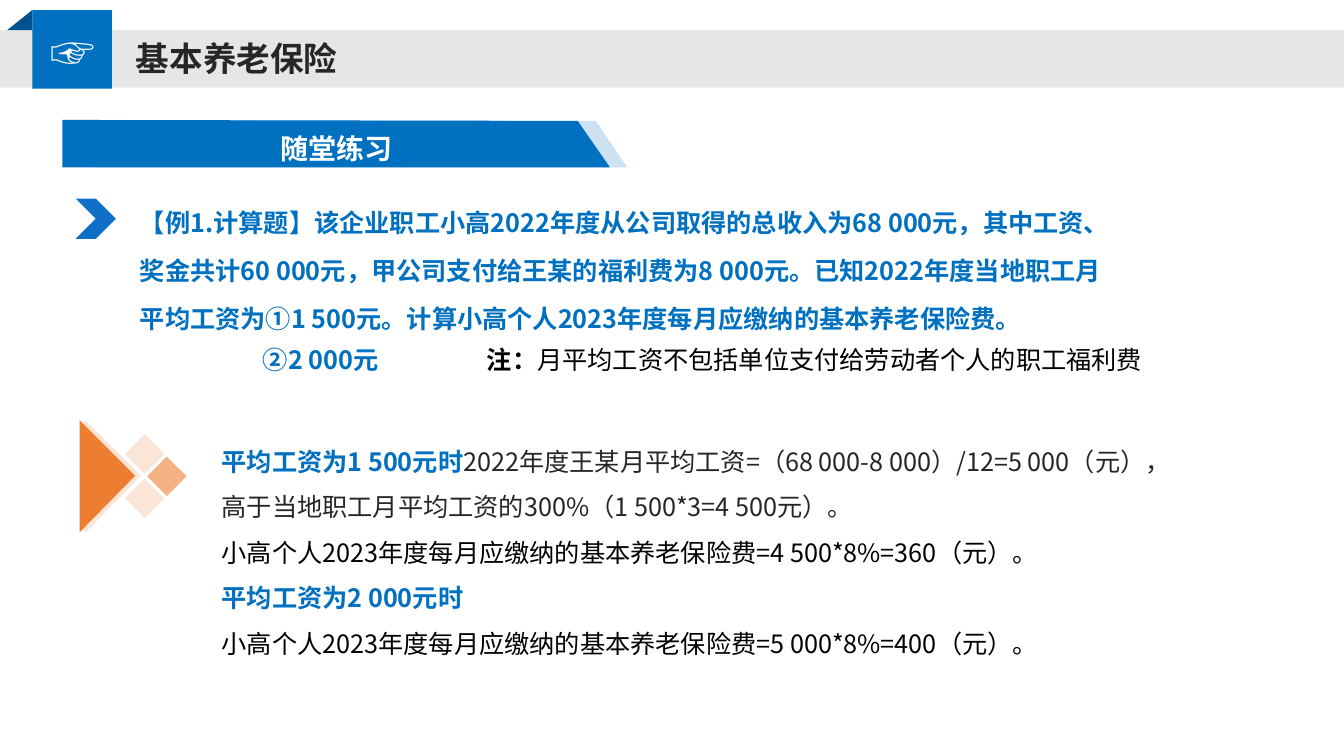
from dataclasses import dataclass

from lxml.etree import SubElement
from pptx import Presentation
from pptx.dml.color import RGBColor
from pptx.enum.shapes import MSO_SHAPE as Preset
from pptx.enum.text import MSO_ANCHOR as Anchor, MSO_AUTO_SIZE as AutoSize
from pptx.oxml.ns import qn
from pptx.util import Pt

PX = 9144  # 100 px to the inch


@dataclass(frozen=True)
class Theme:
    font: str = "Noto Sans CJK SC"
    symbol_font: str = "Noto Sans CJK JP"
    blue: str = "0070C0"
    dark_blue: str = "00518E"
    chevron: str = "0F6FC6"
    band: str = "D9D9D9"
    orange: str = "ED7D31"
    mid_orange: str = "F4B183"
    pale_orange: str = "FBE5D6"
    ink: str = "262626"
    black: str = "000000"
    white: str = "FFFFFF"
    body_size: int = 18
    ribbon_size: int = 20
    title_size: int = 24
    icon_size: int = 32


THEME = Theme()


def paint(shape, color, opacity=100):
    shape.shadow.inherit = False
    shape.fill.solid()
    shape.fill.fore_color.rgb = RGBColor.from_string(color)
    shape.line.fill.background()
    if opacity < 100:
        color_element = shape.fill._xPr.find(qn("a:solidFill"))[0]
        SubElement(color_element, qn("a:alpha"), val=str(opacity * 1000))
    return shape


def add_preset(slide, preset, box, color, opacity=100):
    shape = slide.shapes.add_shape(preset, *(length * PX for length in box))
    return paint(shape, color, opacity)


def add_outline(slide, left, top, points, color, opacity=100):
    """Draw a closed outline from points relative to left and top."""
    start, *others = [(left + x, top + y) for x, y in points]
    builder = slide.shapes.build_freeform(*start, scale=PX)
    builder.add_line_segments(others, close=True)
    return paint(builder.convert_to_shape(), color, opacity)


def add_run(paragraph, text, color, bold=False, size=THEME.body_size, font=THEME.font):
    run = paragraph.add_run()
    run.text = text
    run.font.size = Pt(size)
    run.font.bold = bold
    run.font.color.rgb = RGBColor.from_string(color)
    run.font.name = font
    for script in ("a:ea", "a:sym"):
        SubElement(run.font._element, qn(script), typeface=font)


def add_text(slide, box, lines, wrap=True, spacing=None, after=None, **style):
    """Write lines, each a list of (text, color, bold) runs."""
    frame = slide.shapes.add_textbox(*(length * PX for length in box)).text_frame
    frame.word_wrap = wrap
    frame.auto_size = AutoSize.SHAPE_TO_FIT_TEXT
    for index, runs in enumerate(lines):
        paragraph = frame.add_paragraph() if index else frame.paragraphs[0]
        if spacing:
            paragraph.line_spacing = spacing
        if after:
            paragraph.space_after = Pt(after)
        for text, color, bold in runs:
            add_run(paragraph, text, color, bold, **style)


def add_header(slide, left, top, width):
    add_preset(slide, Preset.RECTANGLE, (left, top + 20, width, 57), THEME.band, 65)
    add_preset(slide, Preset.RECTANGLE, (left + 32, top, 79, 78), THEME.blue)
    add_outline(slide, left + 7, top, [(0, 20), (25, 0), (25, 20)], THEME.dark_blue)
    add_text(slide, (left + 125, top + 23, 222, 50),
             [[("基本养老保险", THEME.ink, True)]], wrap=False, size=THEME.title_size)
    add_text(slide, (left + 40, top + 10, 65, 64), [[("☞", THEME.white, False)]],
             wrap=False, size=THEME.icon_size, font=THEME.symbol_font)


def add_ribbon(slide, left, top, text):
    height = 47
    for offset, upper, lower, opacity in ((29, 500, 531, 20), (0, 511, 543, 100)):
        points = [(0, 0), (upper, 1), (lower, height), (0, height)]
        ribbon = add_outline(slide, left + offset, top, points, THEME.blue, opacity)
    frame = ribbon.text_frame
    frame.word_wrap = True
    frame.vertical_anchor = Anchor.MIDDLE
    paragraph = frame.paragraphs[0]
    paragraph.line_spacing = 1.3
    add_run(paragraph, text, THEME.white, True, THEME.ribbon_size)


def add_question(slide, left, top):
    add_preset(slide, Preset.CHEVRON, (left, top + 5, 40, 40), THEME.chevron)
    question = (
        "【例1.计算题】该企业职工小高2022年度从公司取得的总收入为68 000元，其中工资、",
        "奖金共计60 000元，甲公司支付给王某的福利费为8 000元。已知2022年度当地职工月",
        "平均工资为①1 500元。计算小高个人2023年度每月应缴纳的基本养老保险费。",
    )
    add_text(slide, (left + 54, top, 1014, 145),
             [[(line, THEME.blue, True)] for line in question],
             wrap=False, spacing=1.3, after=6)
    add_text(slide, (left + 176, top + 145, 147, 40), [[("②2 000元", THEME.blue, True)]])
    add_text(slide, (left + 398, top + 145, 671, 40), [[
        ("注：", THEME.black, True),
        ("月平均工资不包括单位支付给劳动者个人的职工福利费", THEME.black, False)]])


def add_answer_marker(slide, left, top):
    for x, y, color in ((45, 14, THEME.pale_orange), (45, 58, THEME.pale_orange),
                        (67, 36, THEME.mid_orange)):
        add_preset(slide, Preset.DIAMOND, (left + x, top + y, 39, 39), color)
    edge = [(6, 0), (61, 55), (6, 111), (3, 108), (55, 55), (3, 3)]
    add_outline(slide, left, top, edge, THEME.pale_orange)
    add_outline(slide, left, top, [(0, 0), (55, 55), (0, 111)], THEME.orange)


def add_answer(slide, left, top):
    add_answer_marker(slide, left, top)
    add_text(slide, (left + 131, top + 6, 956, 237), [
        [("平均工资为1 500元时", THEME.blue, True),
         ("2022年度王某月平均工资=（68 000-8 000）/12=5 000（元），"
          "高于当地职工月平均工资的300%（1 500*3=4 500元）。", THEME.ink, False)],
        [("小高个人2023年度每月应缴纳的基本养老保险费=4 500*8%=360（元）。",
          THEME.black, False)],
        [("平均工资为2 000元时", THEME.blue, True)],
        [("小高个人2023年度每月应缴纳的基本养老保险费=5 000*8%=400（元）。",
          THEME.black, False)],
    ], spacing=1.5)


def main():
    width, height = 1333, 750
    presentation = Presentation()
    presentation.slide_width = width * PX
    presentation.slide_height = height * PX
    slide = presentation.slides.add_slide(presentation.slide_layouts[6])
    add_header(slide, 0, 10, width)
    add_ribbon(slide, 62, 119, "随堂练习")
    add_question(slide, 75, 192)
    add_answer(slide, 79, 417)
    presentation.save("out.pptx")


if __name__ == "__main__":
    main()
